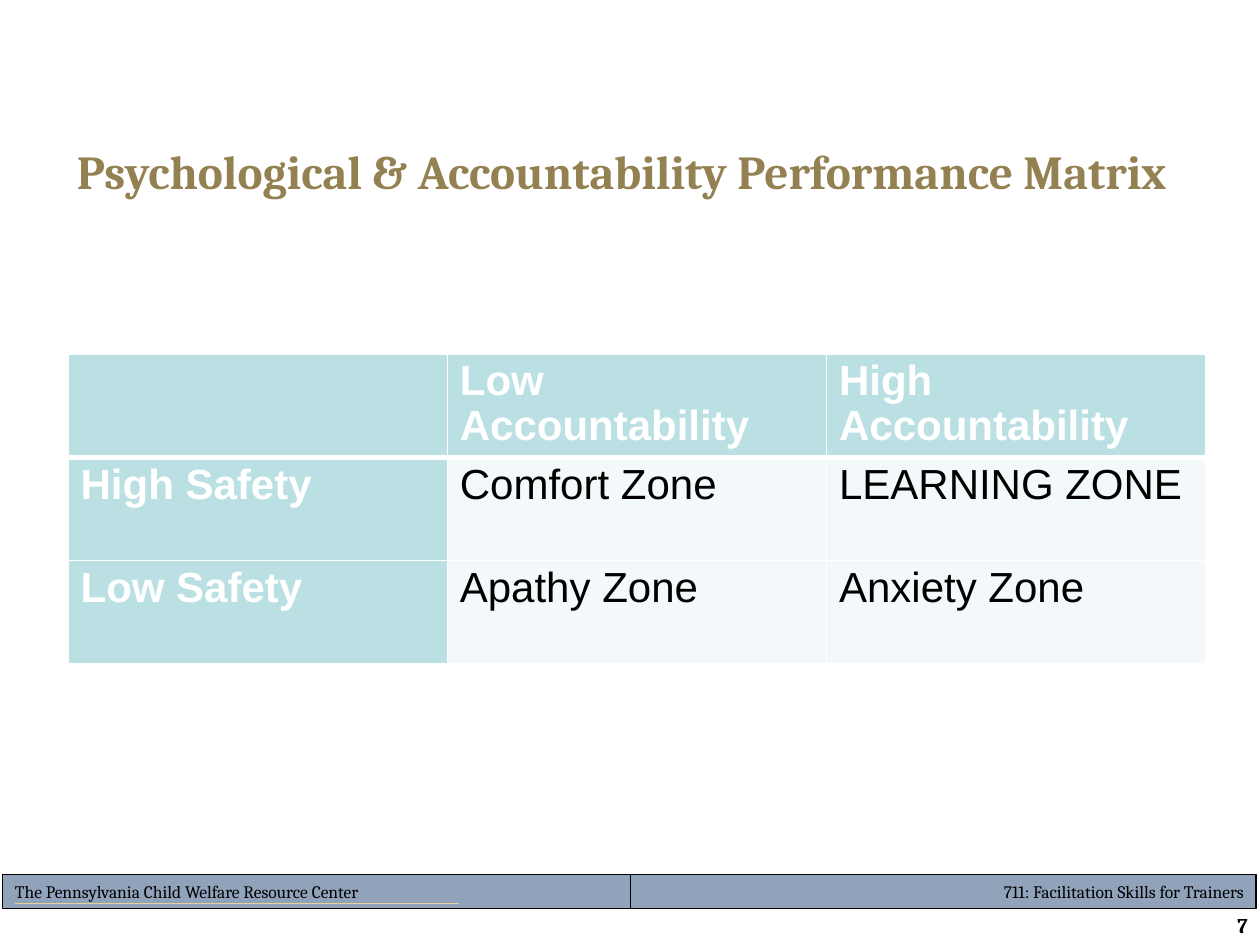
from lxml import etree
from pptx import Presentation
from pptx import util as u
from pptx.dml.color import RGBColor
from pptx.enum import shapes, text
from pptx.oxml import ns

W, H = 10, 7.5
BLACK, WHITE, GOLD = "000000", "FFFFFF", "948151"
BAR, RULE, TEAL, PALE = "91A3BB", "E5D199", "BBE0E3", "F3F9FA"
MATRIX = [
    ["", "Low Accountability", "High Accountability"],
    ["High Safety", "Comfort Zone", "LEARNING ZONE"],
    ["Low Safety", "Apathy Zone", "Anxiety Zone"],
]


def color(value):
    return RGBColor.from_string(value)


def box(*lengths):
    return [u.Inches(v) for v in lengths]


def write(tf, words, size, font, fill, bold=False, align=text.PP_ALIGN.LEFT):
    p = tf.paragraphs[0]
    p.alignment = align
    r = p.add_run()
    r.text = words
    r.font.size = u.Pt(size)
    r.font.name = font
    r.font.bold = bold
    r.font.color.rgb = color(fill)
    return p


def add_title(s, words):
    sp = s.shapes.title
    sp.left, sp.top, sp.width, sp.height = box(0.51, 0.87, 9, 0.97)
    sp.text_frame.vertical_anchor = text.MSO_ANCHOR.MIDDLE
    write(sp.text_frame, words, 27, "Cambria", GOLD, True)


def add_bar(s, left, width, words, line, align):
    sp = s.shapes.add_shape(shapes.MSO_SHAPE.RECTANGLE, *box(left, 6.94, width, 0.27))
    sp.shadow.inherit = False
    sp.fill.solid()
    sp.fill.fore_color.rgb = color(BAR)
    sp.line.color.rgb = color(BLACK)
    sp.line.width = u.Pt(line)
    tf = sp.text_frame
    tf.word_wrap = True
    tf.vertical_anchor = text.MSO_ANCHOR.TOP
    write(tf, words, 10, "Cambria", BLACK, align=align)


def add_rule(s, left, right, y):
    sp = s.shapes.add_connector(shapes.MSO_CONNECTOR.STRAIGHT, *box(left, y, right, y))
    sp.line.color.rgb = color(RULE)
    sp.line.width = u.Pt(0.75)
    etree.SubElement(sp._element.spPr, ns.qn("a:effectLst"))


def add_border(cell, side, width):
    tcPr = cell._tc.get_or_add_tcPr()
    ln = etree.SubElement(tcPr, ns.qn(f"a:ln{side}"), w=str(u.Pt(width)))
    fill = etree.SubElement(ln, ns.qn("a:solidFill"))
    etree.SubElement(fill, ns.qn("a:srgbClr"), val=WHITE)


def add_matrix(s, rows):
    n = len(rows)
    col, row = 3.01, 0.82
    tbl = s.shapes.add_table(n, n, *box(0.54, 2.81, n * col, n * row)).table
    for i, words in enumerate(rows):
        for j, word in enumerate(words):
            cell = tbl.cell(i, j)
            head = i == 0 or j == 0
            for side in "LRTB":
                thick = (i, side) in ((0, "B"), (1, "T"))
                add_border(cell, side, 3 if thick else 1)
            cell.fill.solid()
            cell.fill.fore_color.rgb = color(TEAL if head else PALE)
            if word:
                ink = WHITE if head else BLACK
                p = write(cell.text_frame, word, 24, "Arial", ink, head)
                p.line_spacing = 0.95


def add_page_number(s, number):
    sp = s.shapes.add_textbox(*box(8.89, 7.24, 1.11, 0.21))
    tf = sp.text_frame
    tf.word_wrap = True
    tf.vertical_anchor = text.MSO_ANCHOR.MIDDLE
    write(tf, number, 12, "Cambria", BLACK, True, text.PP_ALIGN.RIGHT)


def main():
    prs = Presentation()
    prs.slide_width, prs.slide_height = box(W, H)
    s = prs.slides.add_slide(prs.slide_layouts[5])
    add_bar(s, 4.51, 5.46, "711: Facilitation Skills for Trainers", 0.75, text.PP_ALIGN.RIGHT)
    add_bar(s, 0.02, 4.98, "The Pennsylvania Child Welfare Resource Center", 0.5, text.PP_ALIGN.LEFT)
    add_rule(s, 0.12, 3.64, 7.17)
    add_title(s, "Psychological & Accountability Performance Matrix")
    add_matrix(s, MATRIX)
    add_page_number(s, "7")
    prs.save("out.pptx")


if __name__ == "__main__":
    main()
